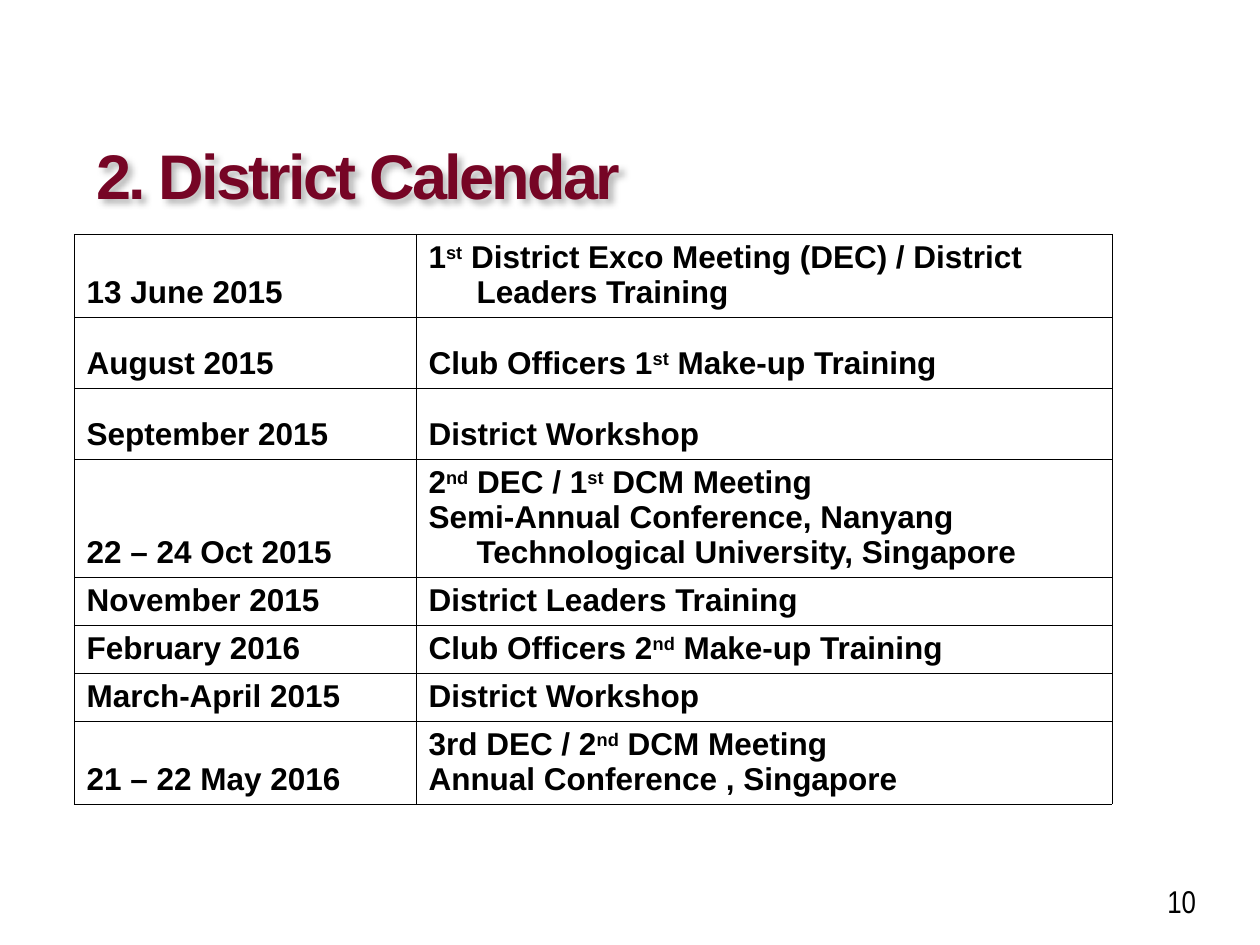
import pptx
import pptx.util
import pptx.dml.color
import pptx.enum.text
import pptx.oxml
from lxml import etree

PX = 914400 // 126
NS = 'xmlns:a="http://schemas.openxmlformats.org/drawingml/2006/main"'


def rgb(value):
    return pptx.dml.color.RGBColor.from_string(value)


def style(p, name, size, color, bold=False):
    p.font.name = name
    p.font.size = pptx.util.Pt(size)
    p.font.bold = bold
    p.font.color.rgb = rgb(color)


prs = pptx.Presentation()
prs.slide_width = pptx.util.Inches(10)
prs.slide_height = pptx.util.Inches(7.5)
s = prs.slides.add_slide(prs.slide_layouts[6])

# Title with a soft shadow behind the letters
title = s.shapes.add_textbox(84 * PX, 125 * PX, 1071 * PX, 110 * PX)
tf = title.text_frame
tf.word_wrap = True
tf.vertical_anchor = pptx.enum.text.MSO_ANCHOR.MIDDLE
p = tf.paragraphs[0]
p.line_spacing = 0.85
r = p.add_run()
r.text = "2. District Calendar"
style(p, "Arial", 36, "760525", True)
r.font._element.set("spc", "-150")
title._element.spPr.append(pptx.oxml.parse_xml(
    f'<a:effectLst {NS}><a:outerShdw blurRad="50800" dist="38100" dir="2700000" algn="tl">'
    '<a:srgbClr val="000000"><a:alpha val="28000"/></a:srgbClr></a:outerShdw></a:effectLst>'))

# Slide number
number = s.shapes.add_textbox(1155 * PX, 876 * PX, 105 * PX, 50 * PX)
tf = number.text_frame
tf.word_wrap = True
p = tf.paragraphs[0]
p.text = "10"
style(p, "Arial Narrow", 18, "000000")

# Calendar: row height, date, event lines; ^ switches superscript on and off
events = [
    (83, "13 June 2015", ["1^st^ District Exco Meeting (DEC) / District Leaders Training"]),
    (71, "August 2015", ["Club Officers 1^st^ Make-up Training"]),
    (71, "September 2015", ["District Workshop"]),
    (118, "22 – 24 Oct 2015", [
        "2^nd^ DEC / 1^st^ DCM Meeting",
        "Semi-Annual Conference, Nanyang Technological University, Singapore"]),
    (48, "November 2015", ["District Leaders Training"]),
    (48, "February 2016", ["Club Officers 2^nd^ Make-up Training"]),
    (48, "March-April 2015", ["District Workshop"]),
    (83, "21 – 22 May 2016", ["3rd DEC / 2^nd^ DCM Meeting", "Annual Conference , Singapore"]),
]
widths = [342, 696]
height = sum(event[0] for event in events)
table = s.shapes.add_table(len(events), 2, 74 * PX, 234 * PX, sum(widths) * PX, height * PX).table
table.first_row = False
table.horz_banding = False
for column, width in zip(table.columns, widths):
    column.width = width * PX

for i, (row_height, date, lines) in enumerate(events):
    table.rows[i].height = row_height * PX
    for j, texts in enumerate([[date], lines]):
        cell = table.cell(i, j)
        cell.vertical_anchor = pptx.enum.text.MSO_ANCHOR.BOTTOM
        cell.fill.background()
        tcPr = cell._tc.get_or_add_tcPr()
        for k, side in enumerate(["lnL", "lnR", "lnT", "lnB"]):
            tcPr.insert(k, etree.fromstring(
                f'<a:{side} {NS} w="3175"><a:solidFill><a:srgbClr val="000000"/>'
                f'</a:solidFill></a:{side}>'))
        tf = cell.text_frame
        for n, text in enumerate(texts):
            p = tf.add_paragraph() if n else tf.paragraphs[0]
            p.line_spacing = pptx.util.Pt(20)
            pPr = p._p.get_or_add_pPr()
            pPr.set("marL", str(48 * PX))
            pPr.set("indent", str(-48 * PX))
            for m, part in enumerate(text.split("^")):
                r = p.add_run()
                r.text = part
                if m % 2:
                    r.font._element.set("baseline", "30000")
            style(p, "Arial", 18, "000000", True)

prs.save("out.pptx")
